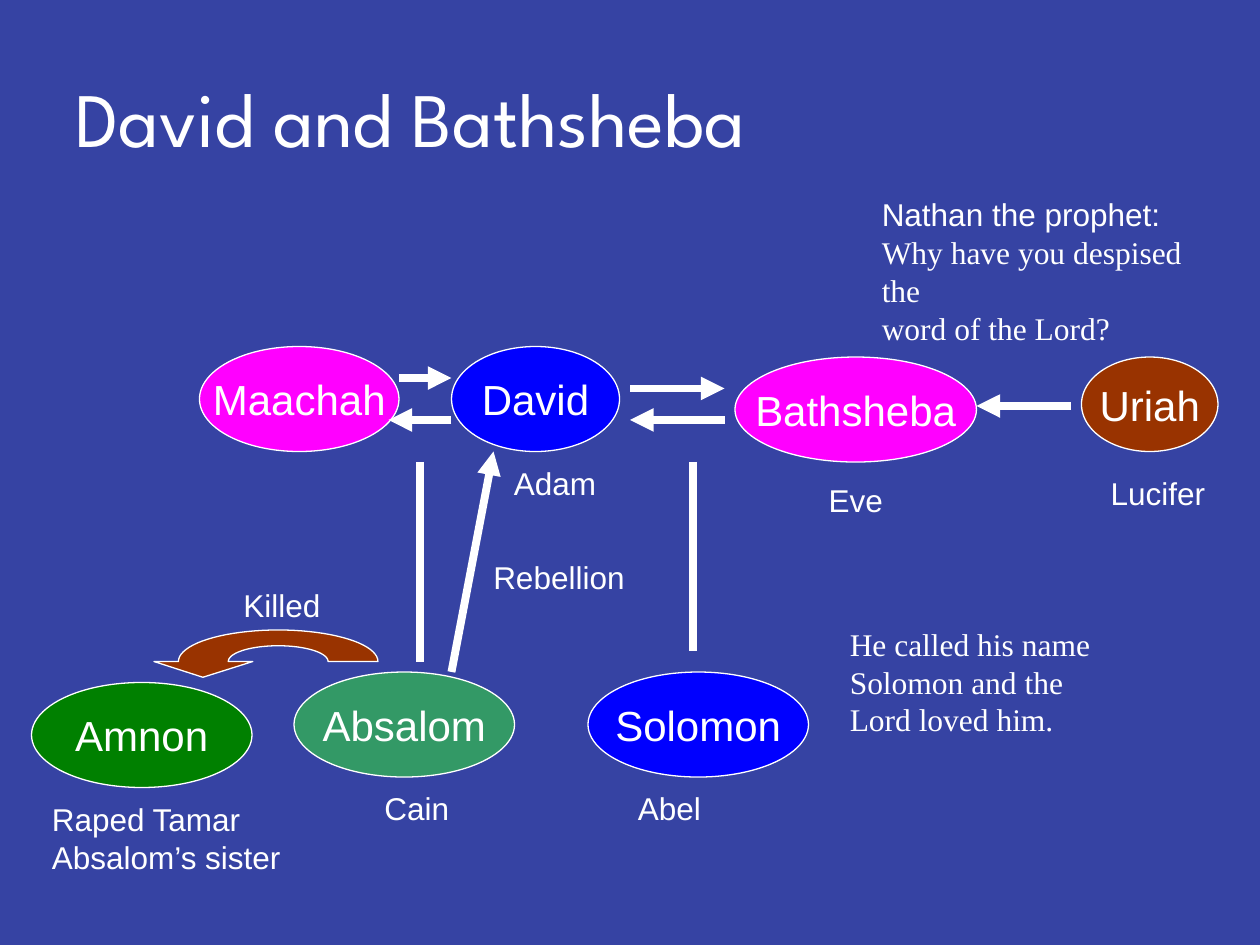
from math import cos, pi, sin
from typing import NamedTuple

from lxml.etree import SubElement
from pptx import Presentation
from pptx.dml.color import RGBColor
from pptx.enum.shapes import MSO_CONNECTOR, MSO_SHAPE
from pptx.enum.text import MSO_ANCHOR, PP_ALIGN
from pptx.oxml.ns import qn
from pptx.util import Pt

WHITE, BACKGROUND, BROWN = "FFFFFF", "3643A3", "993300"
BLUE, PINK = "0000FF", "FF00FF"
SANS, SERIF, DISPLAY = "Arial", "Times New Roman", "League Spartan"


class Person(NamedTuple):
    name: str
    x: float
    y: float
    w: float
    h: float
    color: str


class Label(NamedTuple):
    lines: list[str]
    x: float
    y: float
    w: float
    h: float = 29
    fonts: tuple[str, ...] = (SANS,)
    wrap: bool = False


class Link(NamedTuple):
    x1: float
    y1: float
    x2: float
    y2: float
    arrow: bool = True


PEOPLE = [
    Person("David", 258, 198, 96, 60, BLUE),
    Person("Bathsheba", 420, 204, 138, 60, PINK),
    Person("Uriah", 618, 204, 78, 54, BROWN),
    Person("Solomon", 336, 384, 126, 60, BLUE),
    Person("Maachah", 114, 198, 114, 60, PINK),
    Person("Absalom", 168, 384, 126, 60, "339966"),
    Person("Amnon", 18, 390, 126, 60, "008000"),
]
LABELS = [
    Label(["Adam"], 286.5, 261.5, 65),
    Label(["Eve"], 466.5, 271.5, 47),
    Label(["Lucifer"], 627.5, 267.5, 70),
    Label(["Cain"], 212.5, 447.5, 54),
    Label(["Abel"], 357.5, 447.5, 52),
    Label(["He called his name", "Solomon and the", "Lord loved him."],
          478.5, 353.5, 156, 73, (SERIF,)),
    Label(["Nathan the prophet:", "Why have you despised the", "word of the Lord?"],
          496.8, 108, 205, 73, (SANS, SERIF, SERIF), wrap=True),
    Label(["Killed"], 132, 331.5, 60),
    Label(["Raped Tamar", "Absalom’s sister"], 22.5, 453.5, 148, 50.5),
    Label(["Rebellion"], 274.8, 315.5, 96),
]
LINKS = [
    Link(414, 240, 360, 240),
    Link(612, 232, 558, 232),
    Link(360, 222, 414, 222),
    Link(228, 216, 258, 216),
    Link(258, 240, 222, 240),
    Link(258, 384, 282, 258),
    Link(240, 264, 240, 378, arrow=False),
    Link(396, 264, 396, 372, arrow=False),
]


def rgb(color: str) -> RGBColor:
    return RGBColor.from_string(color)


def write(tf, lines: list[str], *, size: float, fonts: tuple[str, ...] = (SANS,),
          align=PP_ALIGN.LEFT, anchor=MSO_ANCHOR.TOP, wrap: bool = False) -> None:
    """Fill a text frame with one paragraph a line; a single font serves all lines."""
    tf.word_wrap = wrap
    tf.vertical_anchor = anchor
    for i, line in enumerate(lines):
        p = tf.paragraphs[0] if i == 0 else tf.add_paragraph()
        p.alignment = align
        r = p.add_run()
        r.text = line
        r.font.name = fonts[i % len(fonts)]
        r.font.size = Pt(size)
        r.font.color.rgb = rgb(WHITE)


def paint(sp, color: str) -> None:
    sp.shadow.inherit = False
    sp.fill.solid()
    sp.fill.fore_color.rgb = rgb(color)
    sp.line.color.rgb = rgb(WHITE)
    sp.line.width = Pt(0.75)


def add_person(s, person: Person) -> None:
    sp = s.shapes.add_shape(MSO_SHAPE.OVAL, Pt(person.x), Pt(person.y),
                            Pt(person.w), Pt(person.h))
    paint(sp, person.color)
    write(sp.text_frame, [person.name], size=24, align=PP_ALIGN.CENTER,
          anchor=MSO_ANCHOR.MIDDLE)


def add_label(s, label: Label) -> None:
    sp = s.shapes.add_textbox(Pt(label.x), Pt(label.y), Pt(label.w), Pt(label.h))
    write(sp.text_frame, label.lines, size=18, fonts=label.fonts, wrap=label.wrap)


def add_link(s, link: Link) -> None:
    cn = s.shapes.add_connector(MSO_CONNECTOR.STRAIGHT, Pt(link.x1), Pt(link.y1),
                                Pt(link.x2), Pt(link.y2))
    cn.line.color.rgb = rgb(WHITE)
    cn.line.width = Pt(4.5)
    if link.arrow:
        SubElement(cn.line._get_or_add_ln(), qn("a:tailEnd"), type="triangle")
    SubElement(cn._element.spPr, qn("a:effectLst"))


def half_ellipse(cx: float, cy: float, rx: float, ry: float,
                 steps: int = 40) -> list[tuple[float, float]]:
    """Points of the upper half, from left to right."""
    angles = [pi * (1 - i / steps) for i in range(steps + 1)]
    return [(cx + rx * cos(a), cy - ry * sin(a)) for a in angles]


def add_killing_arrow(s) -> None:
    cx, base = 159, 378
    inner = half_ellipse(cx, base, 28.5, 9)
    outer = half_ellipse(cx, base, 57, 18)
    head = [(88, base), (116, 387), (144.5, base)]
    points = [(Pt(x), Pt(y)) for x, y in inner + outer[::-1] + head]
    builder = s.shapes.build_freeform(*points[0], scale=1.0)
    builder.add_line_segments(points[1:], close=True)
    paint(builder.convert_to_shape(), BROWN)


def main() -> None:
    prs = Presentation()
    prs.slide_width, prs.slide_height = Pt(720), Pt(540)
    s = prs.slides.add_slide(prs.slide_layouts[6])
    s.background.fill.solid()
    s.background.fill.fore_color.rgb = rgb(BACKGROUND)

    title = s.shapes.add_textbox(Pt(36), Pt(21.6), Pt(648), Pt(90))
    write(title.text_frame, ["David and Bathsheba"], size=44, fonts=(DISPLAY,),
          anchor=MSO_ANCHOR.MIDDLE, wrap=True)
    for person in PEOPLE:
        add_person(s, person)
    for link in LINKS:
        add_link(s, link)
    add_killing_arrow(s)
    for label in LABELS:
        add_label(s, label)
    prs.save("out.pptx")


if __name__ == "__main__":
    main()
